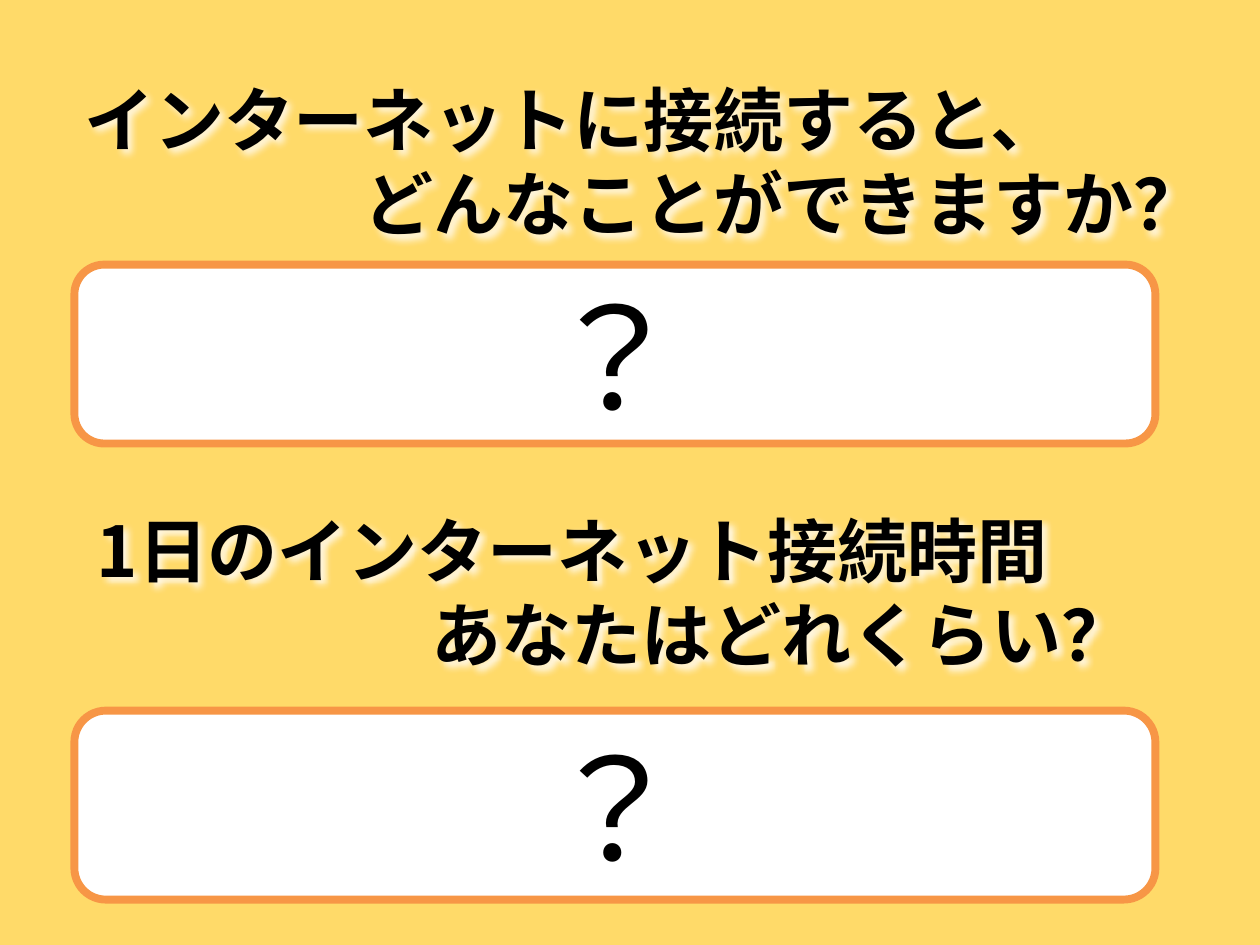
from lxml import etree
from pptx import Presentation
from pptx.dml.color import RGBColor
from pptx.enum import shapes, text
from pptx.oxml import ns
from pptx.util import Inches, Pt

FONT = "Noto Sans CJK JP"
AMBER = RGBColor(0xFF, 0xDA, 0x69)
ORANGE = RGBColor(0xF7, 0x96, 0x46)
WHITE = RGBColor(0xFF, 0xFF, 0xFF)
BLACK = RGBColor(0, 0, 0)

# Questions: left, top, width, height, anchor, lines as (indent, wording)
QUESTIONS = [
    (0.57, 0.49, 9.43, 1.57, text.MSO_ANCHOR.MIDDLE,
     [(0, "インターネットに接続すると、"), (2.22, "どんなことができますか？")]),
    (0, 4.04, 9.17, 1.37, text.MSO_ANCHOR.BOTTOM,
     [(0.67, "1日のインターネット接続時間"), (3.33, "あなたはどれくらい？")]),
]
# Answer boxes: top, height
ANSWERS = [(2.1, 1.42), (5.64, 1.5)]
ANSWER_LEFT, ANSWER_WIDTH = 0.59, 8.58


def write(para, wording, size, bold=False, align=None, indent=0, spacing=None):
    para.alignment = align
    para.line_spacing = spacing
    if indent:
        para._p.get_or_add_pPr().set("marL", str(Inches(indent)))
    span = para.add_run()
    span.text = wording
    span.font.size = Pt(size)
    span.font.bold = bold
    span.font.name = FONT
    span.font.color.rgb = BLACK
    east_asian = etree.SubElement(span._r.get_or_add_rPr(), ns.qn("a:ea"))
    east_asian.set("typeface", FONT)


def add_white_shadow(box):
    effects = etree.SubElement(box._element.spPr, ns.qn("a:effectLst"))
    shadow = etree.SubElement(effects, ns.qn("a:outerShdw"), blurRad=str(Pt(4)),
                              dist=str(Pt(3)), dir="2700000", algn="tl")
    color = etree.SubElement(shadow, ns.qn("a:srgbClr"), val=str(WHITE))
    etree.SubElement(color, ns.qn("a:alpha"), val="80000")


deck = Presentation()
deck.slide_width, deck.slide_height = Inches(10), Inches(7.5)
page = deck.slides.add_slide(deck.slide_layouts[6])
page.background.fill.solid()
page.background.fill.fore_color.rgb = AMBER

# Questions
for left, top, width, height, anchor, lines in QUESTIONS:
    box = page.shapes.add_textbox(Inches(left), Inches(top), Inches(width), Inches(height))
    add_white_shadow(box)
    frame = box.text_frame
    frame.word_wrap = True
    frame.vertical_anchor = anchor
    for number, (indent, wording) in enumerate(lines):
        para = frame.add_paragraph() if number else frame.paragraphs[0]
        write(para, wording, 40, bold=True, indent=indent, spacing=Pt(48))

# Answer boxes
for top, height in ANSWERS:
    box = page.shapes.add_shape(shapes.MSO_SHAPE.ROUNDED_RECTANGLE, Inches(ANSWER_LEFT),
                                Inches(top), Inches(ANSWER_WIDTH), Inches(height))
    box.shadow.inherit = False
    box.fill.solid()
    box.fill.fore_color.rgb = WHITE
    box.line.color.rgb = ORANGE
    box.line.width = Pt(4.5)
    box.text_frame.vertical_anchor = text.MSO_ANCHOR.MIDDLE
    write(box.text_frame.paragraphs[0], "？", 80, align=text.PP_ALIGN.CENTER)

deck.save("out.pptx")
